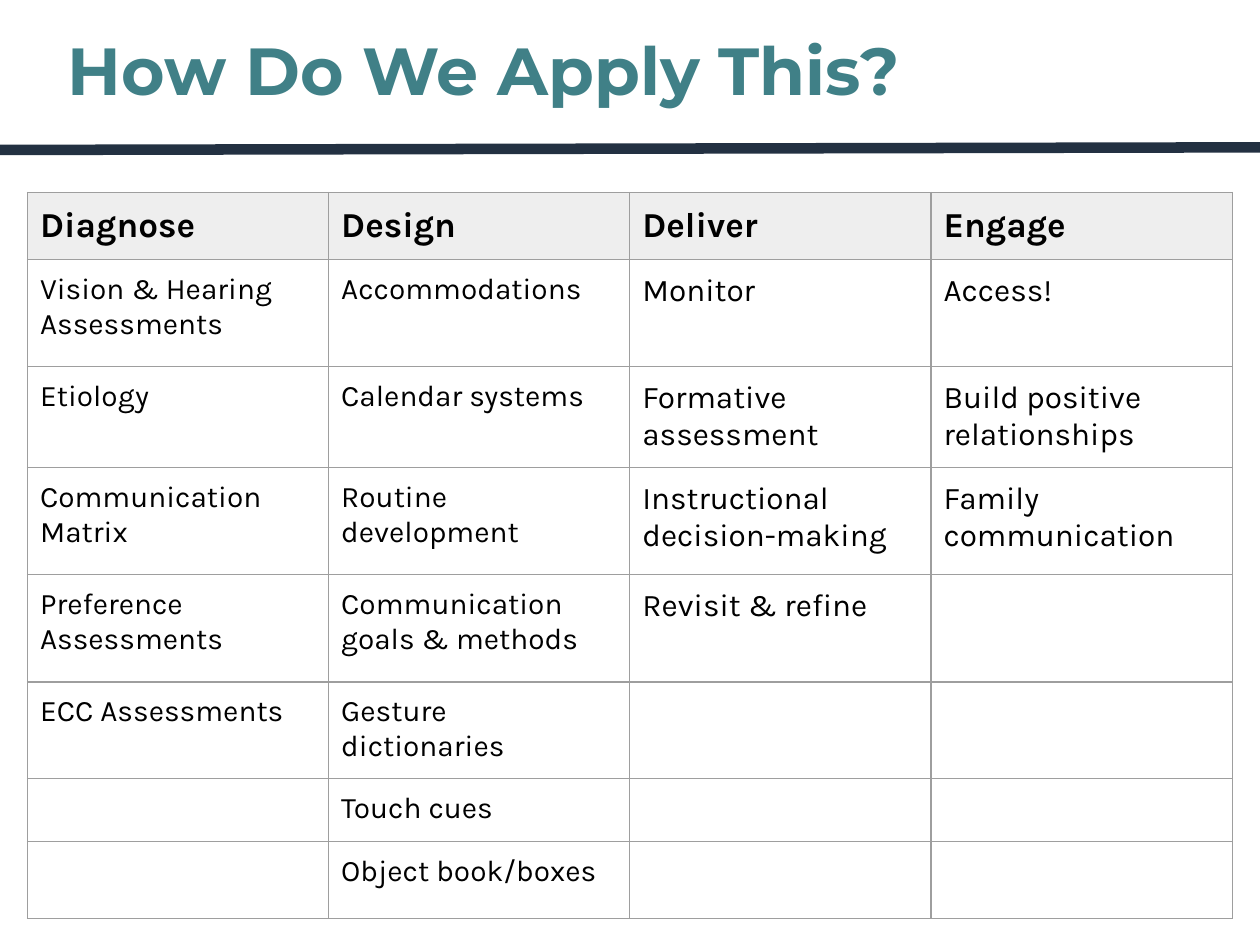
"""Build the "How Do We Apply This?" slide with its four-column practice table."""
import pptx
import pptx.dml.color
import pptx.enum.shapes
import pptx.oxml
import pptx.oxml.ns
import pptx.util

Pt = pptx.util.Pt
RGBColor = pptx.dml.color.RGBColor

TEAL = RGBColor(0x40, 0x80, 0x87)
NAVY = RGBColor(0x23, 0x31, 0x42)
BLACK = RGBColor(0, 0, 0)
HEADER_GREY = RGBColor(0xEE, 0xEE, 0xEE)
BORDER_GREY = RGBColor(0x9E, 0x9E, 0x9E)

COLUMN_SIZES = [17, 17, 18, 18]
ROW_HEIGHTS = [36.7, 61.2, 55.4, 61.2, 61.2, 43.9, 34.6, 43.9]
ROWS = [
    ["Diagnose", "Design", "Deliver", "Engage"],
    ["Vision & Hearing Assessments", "Accommodations", "Monitor", "Access!"],
    ["Etiology", "Calendar systems", "Formative assessment", "Build positive relationships"],
    ["Communication Matrix", "Routine development", "Instructional decision-making", "Family communication"],
    ["Preference Assessments", "Communication goals & methods", "Revisit & refine", ""],
    ["ECC Assessments", "Gesture dictionaries", "", ""],
    ["", "Touch cues", "", ""],
    ["", "Object book/boxes", "", ""],
]


class SlideBuilder:
    title_font = "Montserrat"
    body_font = "Karla"
    inset = Pt(7.2)

    def __init__(self, page):
        self.page = page

    def set_insets(self, holder):
        holder.margin_left = holder.margin_right = self.inset
        holder.margin_top = holder.margin_bottom = self.inset

    def format_text(self, frame, name, size, color, bold):
        for para in frame.paragraphs:
            for span in para.runs:
                span.font.name = name
                span.font.size = Pt(size)
                span.font.bold = bold
                span.font.color.rgb = color

    def append_xml(self, parent, tag, attributes="", content=""):
        namespace = pptx.oxml.ns.nsdecls("a")
        parent.append(pptx.oxml.parse_xml(
            f"<{tag} {namespace} {attributes}>{content}</{tag}>"))

    def rule(self, x1, y1, x2, y2, color, width):
        line = self.page.shapes.add_connector(
            pptx.enum.shapes.MSO_CONNECTOR.STRAIGHT, Pt(x1), Pt(y1), Pt(x2), Pt(y2))
        line.line.color.rgb = color
        line.line.width = Pt(width)
        self.append_xml(line._element.spPr, "a:effectLst")

    def title(self, text, left, top, width, height):
        box = self.page.shapes.add_textbox(Pt(left), Pt(top), Pt(width), Pt(height))
        frame = box.text_frame
        frame.word_wrap = True
        self.set_insets(frame)
        frame.text = text
        self.format_text(frame, self.title_font, 38, TEAL, True)

    def border(self, cell, color, width):
        properties = cell._tc.get_or_add_tcPr()
        fill = f'<a:solidFill><a:srgbClr val="{color}"/></a:solidFill>'
        for side in ("a:lnL", "a:lnR", "a:lnT", "a:lnB"):
            self.append_xml(properties, side, f'w="{int(Pt(width))}"', fill)

    def cell(self, cell, text, size, is_header):
        self.set_insets(cell)
        cell.text = text
        self.format_text(cell.text_frame, self.body_font, size, BLACK, is_header)
        self.border(cell, BORDER_GREY, 0.75)
        if is_header:
            cell.fill.solid()
            cell.fill.fore_color.rgb = HEADER_GREY
        else:
            cell.fill.background()

    def table(self, rows, heights, sizes, left, top, width):
        holder = self.page.shapes.add_table(
            len(rows), len(sizes), Pt(left), Pt(top), Pt(width), Pt(sum(heights)))
        grid = holder.table
        grid.first_row = False
        grid.horz_banding = False
        for row_index, (texts, height) in enumerate(zip(rows, heights)):
            grid.rows[row_index].height = Pt(height)
            is_header = row_index == 0
            for column_index, (text, size) in enumerate(zip(texts, sizes)):
                self.cell(grid.cell(row_index, column_index), text,
                          20 if is_header else size, is_header)


def main():
    deck = pptx.Presentation()
    deck.slide_width, deck.slide_height = Pt(720), Pt(540)
    builder = SlideBuilder(deck.slides.add_slide(deck.slide_layouts[6]))
    builder.rule(-0.7, 85.7, 720.7, 84.2, NAVY, 6)
    builder.title("How Do We Apply This?", 31.7, 9.4, 671, 59.8)
    builder.table(ROWS, ROW_HEIGHTS, COLUMN_SIZES, 15.7, 110, 688.4)
    deck.save("out.pptx")


if __name__ == "__main__":
    main()
